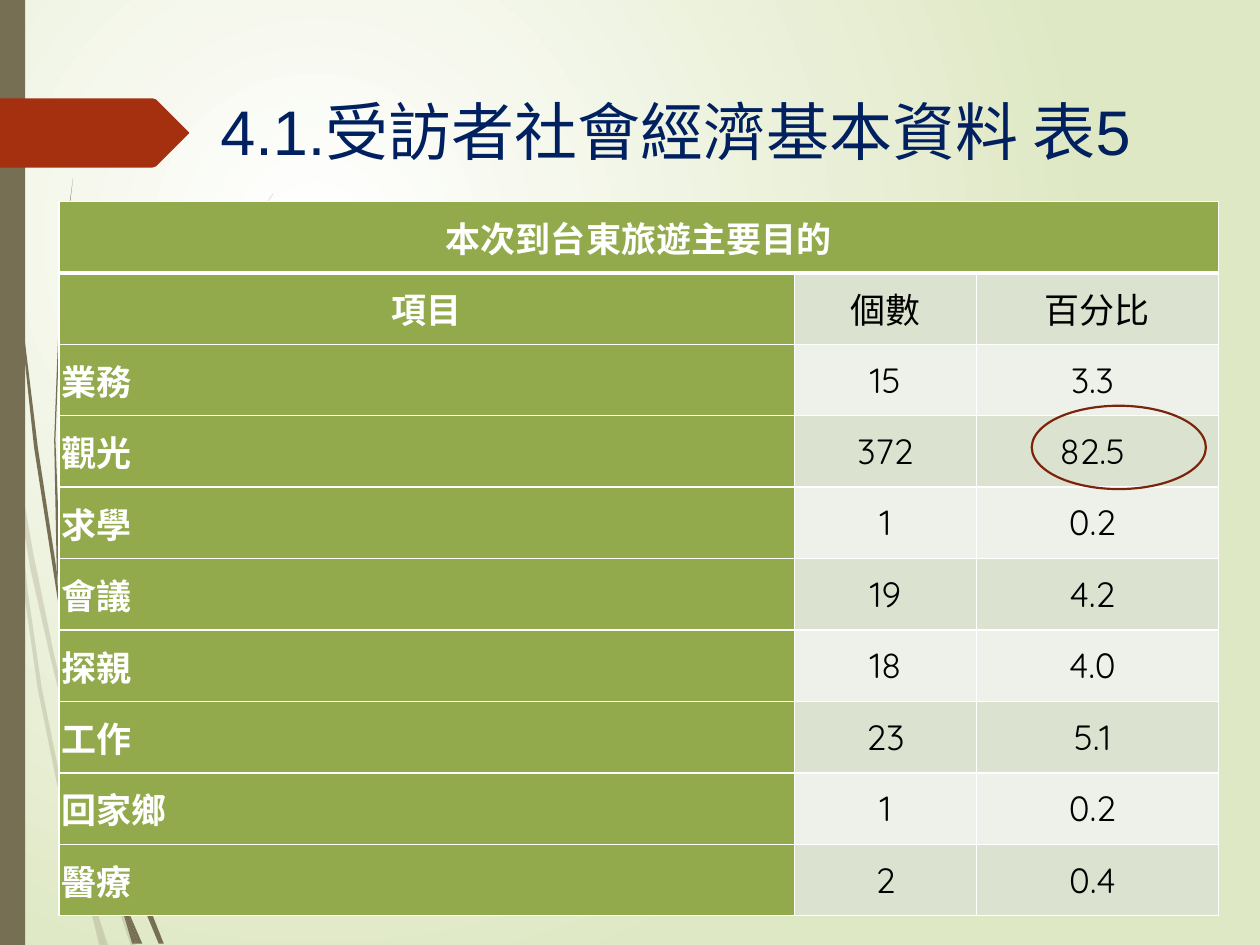
from lxml import etree
from pptx import Presentation, util as u
from pptx.dml.color import RGBColor
from pptx.enum import shapes, text
from pptx.oxml import ns

BROWN, GREEN, WHITE = "766F54", "92AA4C", "FFFFFF"
BANDS = ("DCE2D0", "EEF1E9")
HEADING = "本次到台東旅遊主要目的"
ROWS = [
    ("項目", "個數", "百分比"),
    ("業務", "15", "3.3 "),
    ("觀光", "372", "82.5 "),
    ("求學", "1", "0.2 "),
    ("會議", "19", "4.2 "),
    ("探親", "18", "4.0 "),
    ("工作", "23", "5.1 "),
    ("回家鄉", "1", "0.2 "),
    ("醫療", "2", "0.4 "),
]
PALE_WISPS = [
    [(8, 350), (6, 322), (0, 282), (0, 299), (7, 344)],
    [(40, 522), (59, 599), (59, 586), (43, 520), (26, 437), (10, 345), (12, 376), (24, 451)],
    [(64, 607), (61, 596), (61, 610), (85, 694), (104, 751), (108, 751), (88, 692)],
    [(83, 751), (86, 751), (73, 711)],
    [(64, 683), (48, 619), (33, 545), (22, 469), (12, 376), (8, 350), (19, 470),
     (30, 547), (45, 621), (64, 693), (70, 714), (69, 707)],
    [(58, 599), (60, 646), (64, 683), (73, 711), (72, 706), (63, 646), (61, 608)],
    [(61, 584), (65, 522), (76, 462), (92, 404), (111, 349), (134, 295), (159, 245),
     (187, 198), (217, 154), (217, 153), (186, 197), (158, 244), (133, 294),
     (110, 348), (91, 403), (75, 461), (64, 521), (59, 586), (61, 596)],
    [(70, 714), (79, 751), (82, 751)],
    [(61, 608), (61, 596), (59, 586), (58, 599)],
    [(67, 692), (65, 683), (70, 714), (82, 751), (83, 751), (73, 711)],
]
DARK_WISPS = [
    [(5, 110), (14, 233), (27, 355), (46, 477), (47, 481), (45, 453), (30, 355),
     (15, 232), (6, 109), (4, 48), (3, 0), (2, 0), (3, 48)],
    [(73, 592), (88, 645), (88, 631), (77, 590), (62, 532), (50, 472), (53, 505), (62, 549)],
    [(94, 649), (91, 641), (91, 656), (109, 708), (126, 749), (130, 749), (113, 706)],
    [(91, 691), (81, 657), (69, 607), (60, 556), (53, 505), (47, 477), (56, 557),
     (65, 608), (77, 659), (92, 708), (97, 722), (96, 717)],
    [(50, 472), (48, 453), (44, 349), (48, 245), (52, 193), (58, 141), (51, 193),
     (47, 245), (43, 349), (45, 449), (49, 472)],
    [(110, 749), (113, 749), (100, 719)],
    [(47, 477), (53, 505), (50, 472), (45, 449)],
    [(91, 633), (95, 592), (103, 552), (115, 513), (131, 476), (169, 406), (191, 374),
     (216, 344), (215, 344), (191, 373), (168, 405), (129, 474), (113, 512),
     (101, 551), (92, 591), (88, 631), (91, 641)],
    [(97, 722), (105, 749), (108, 749)],
    [(88, 645), (91, 691), (100, 719), (100, 716), (91, 656)],
    [(88, 645), (91, 656), (91, 641), (88, 631)],
    [(96, 706), (91, 691), (97, 722), (108, 749), (110, 749), (100, 719)],
]
ARROW = [(149, 107), (124, 132), (121, 133), (0, 133), (0, 78), (121, 78),
         (124, 79), (149, 104), (150, 105), (150, 106)]


def rgb(value):
    """Turn a hex string into a colour."""
    return RGBColor.from_string(value)


def paint(shape, color):
    """Give a shape a plain fill without outline or shadow."""
    shape.shadow.inherit = False
    shape.fill.solid()
    shape.fill.fore_color.rgb = rgb(color)
    shape.line.fill.background()


def add_outline(parent, points, color, opacity=100):
    """Draw a closed outline from points on a fine grid."""
    builder = parent.build_freeform(*points[0], scale=u.Cm(0.0254))
    builder.add_line_segments(points[1:], close=True)
    outline = builder.convert_to_shape()
    paint(outline, color)
    if opacity < 100:
        tone = outline.fill._xPr.find(".//" + ns.qn("a:srgbClr"))
        etree.SubElement(tone, ns.qn("a:alpha"), val=str(opacity * 1000))


def add_wisps(slide, wisps, opacity):
    """Group a bundle of grass blades."""
    bundle = slide.shapes.add_group_shape()
    for wisp in wisps:
        add_outline(bundle.shapes, wisp, BROWN, opacity)


def set_background(slide):
    """Lay a radial glow from white to pale green."""
    fill = slide.background.fill
    fill.gradient()
    for stop, color, position in zip(fill.gradient_stops, (WHITE, "DFE8C4"), (0, 1)):
        stop.color.rgb = rgb(color)
        stop.position = position
    glow = slide.element.find(".//" + ns.qn("a:gradFill"))
    linear = glow.find(ns.qn("a:lin"))
    circle = etree.Element(ns.qn("a:path"))
    circle.set("path", "circle")
    etree.SubElement(circle, ns.qn("a:fillToRect"), l="50000", t="50000", r="100000", b="100000")
    glow.replace(linear, circle)


def add_run(paragraph, words, size, font, color, bold=False):
    """Append a formatted run."""
    run = paragraph.add_run()
    run.text = words
    run.font.size, run.font.name, run.font.bold = u.Pt(size), font, bold
    run.font.color.rgb = rgb(color)


def set_title(slide, words):
    """Place and fill the title placeholder."""
    title = slide.shapes.title
    title.left, title.top, title.width, title.height = map(u.Cm, (4.19, 1.73, 19.53, 3.56))
    frame = title.text_frame
    frame.auto_size = text.MSO_AUTO_SIZE.NONE
    frame.vertical_anchor = text.MSO_ANCHOR.TOP
    frame.paragraphs[0].alignment = text.PP_ALIGN.LEFT
    add_run(frame.paragraphs[0], words, 36, "Arial", "002060")


def set_borders(cell, top=1, bottom=1):
    """Rule all four sides of a cell in white."""
    widths = {"L": 1, "R": 1, "T": top, "B": bottom}
    for index, (side, width) in enumerate(widths.items()):
        line = etree.Element(ns.qn("a:ln" + side), w=str(u.Pt(width)))
        solid = etree.SubElement(line, ns.qn("a:solidFill"))
        etree.SubElement(solid, ns.qn("a:srgbClr"), val=WHITE)
        cell._tc.get_or_add_tcPr().insert(index, line)


def fill_cell(cell, words, fill, color, bold, centred):
    """Write and colour one table cell."""
    cell.fill.solid()
    cell.fill.fore_color.rgb = rgb(fill)
    cell.vertical_anchor = text.MSO_ANCHOR.MIDDLE
    cell.margin_left = cell.margin_right = u.Cm(0.05)
    cell.margin_top = cell.margin_bottom = 0
    paragraph = cell.text_frame.paragraphs[0]
    paragraph.alignment = text.PP_ALIGN.CENTER if centred else text.PP_ALIGN.LEFT
    add_run(paragraph, words, 20, "Quicksand", color, bold)


def add_purposes(slide):
    """Build the table of travel purposes."""
    widths, height = (14.83, 3.66, 4.88), 1.44
    count = len(ROWS) + 1
    purposes = slide.shapes.add_table(
        count, len(widths), u.Cm(1.19), u.Cm(4.06), u.Cm(sum(widths)), u.Cm(height * count)).table
    for column, width in zip(purposes.columns, widths):
        column.width = u.Cm(width)
    for row in purposes.rows:
        row.height = u.Cm(height)
    heading = purposes.cell(0, 0)
    heading.merge(purposes.cell(0, 2))
    fill_cell(heading, HEADING, GREEN, WHITE, True, True)
    for column in range(len(widths)):
        set_borders(purposes.cell(0, column), bottom=3)
    for r, row in enumerate(ROWS):
        for c, words in enumerate(row):
            cell = purposes.cell(r + 1, c)
            label = c == 0
            fill_cell(cell, words, GREEN if label else BANDS[r % 2],
                      WHITE if label else "000000", label, r == 0 or not label)
            set_borders(cell, top=1 if r else 3)


def add_highlight(slide):
    """Circle the leading percentage."""
    ring = slide.shapes.add_shape(
        shapes.MSO_SHAPE.OVAL, *map(u.Cm, (20.8, 8.18, 3.51, 1.68)))
    ring.shadow.inherit = False
    ring.fill.background()
    ring.line.color.rgb = rgb("7A240C")
    ring.line.width = u.Pt(1.25)


def main():
    """Build and save the slide."""
    deck = Presentation()
    deck.slide_width, deck.slide_height = u.Cm(25.4), u.Cm(19.05)
    slide = deck.slides.add_slide(deck.slide_layouts[5])
    set_background(slide)
    add_wisps(slide, PALE_WISPS, 20)
    add_wisps(slide, DARK_WISPS, 100)
    stripe = slide.shapes.add_shape(
        shapes.MSO_SHAPE.RECTANGLE, 0, 0, u.Cm(0.51), u.Cm(19.05))
    paint(stripe, BROWN)
    add_outline(slide.shapes, ARROW, "A53010")
    set_title(slide, "4.1.受訪者社會經濟基本資料 表5")
    add_purposes(slide)
    add_highlight(slide)
    deck.save("out.pptx")


if __name__ == "__main__":
    main()
